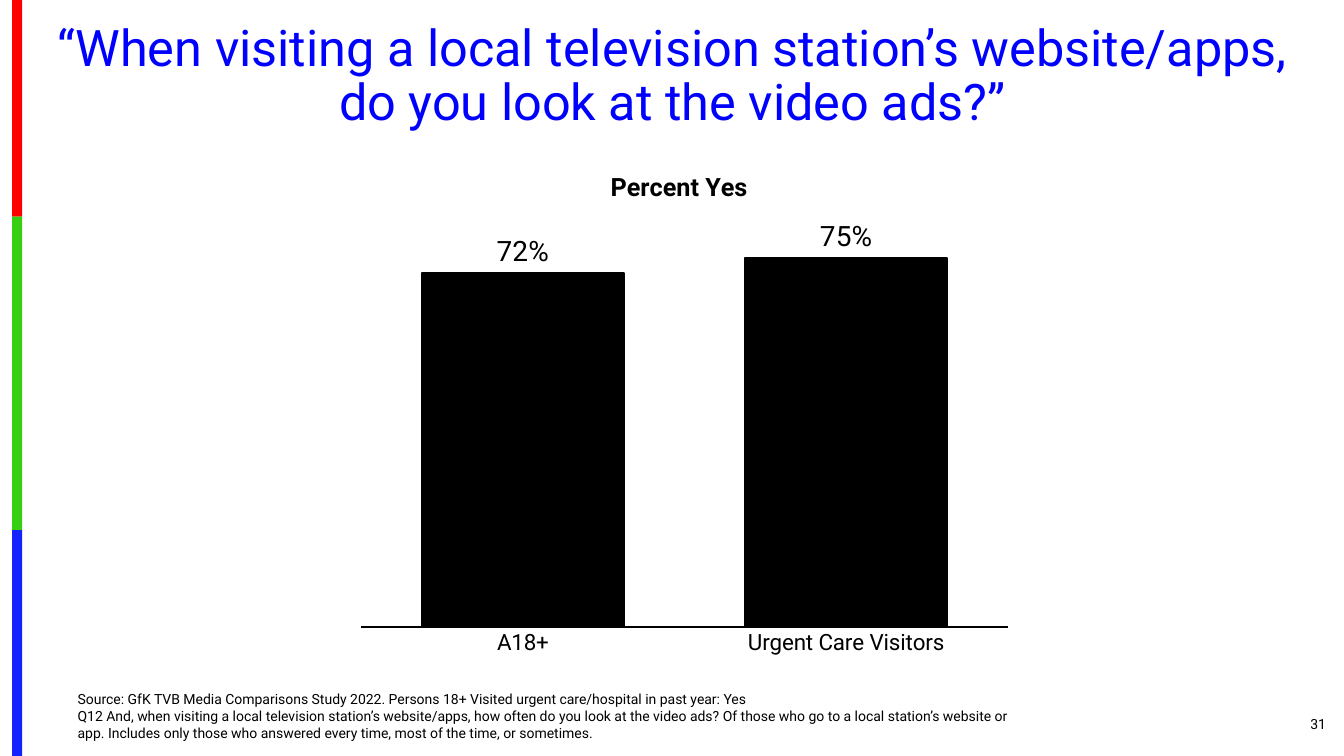
from dataclasses import dataclass
from lxml.etree import SubElement as Sub
from pptx import Presentation
from pptx.chart.data import CategoryChartData as Data
from pptx.dml.color import RGBColor as RGB
from pptx.enum.chart import XL_CHART_TYPE as Kind, XL_LABEL_POSITION as Spot
from pptx.enum.chart import XL_TICK_LABEL_POSITION as Tags, XL_TICK_MARK as Tick
from pptx.enum.shapes import MSO_SHAPE as Form
from pptx.enum.text import MSO_ANCHOR as Anchor, MSO_AUTO_SIZE as Fit, PP_ALIGN as Align
from pptx.oxml import parse_xml
from pptx.oxml.ns import nsdecls, qn
from pptx.util import Inches, Pt


@dataclass(frozen=True)
class Theme:
    font: str = "Roboto"
    ink: str = "000000"
    head: str = "0000FF"
    red: str = "FE0000"
    green: str = "36CF12"
    blue: str = "1322FE"
    title: int = 36
    value: int = 20
    label: int = 18
    axis: int = 16
    note: int = 10


@dataclass(frozen=True)
class Box:
    x: float
    y: float
    w: float
    h: float

    def lengths(self):
        return [Inches(n) for n in (self.x, self.y, self.w, self.h)]


THEME = Theme()


def style(font, size, color=THEME.ink, bold=False):
    font.name = THEME.font
    font.size = Pt(size)
    font.bold = bold
    font.color.rgb = RGB.from_string(color)


def move(shape, box):
    shape.left, shape.top, shape.width, shape.height = box.lengths()


def add_stripes(slide, box):
    bands = ((THEME.red, 2.15), (THEME.green, 3.11), (THEME.blue, 2.24))
    top = box.y
    for color, tall in bands:
        band = Box(box.x, top, box.w, tall)
        stripe = slide.shapes.add_shape(Form.RECTANGLE, *band.lengths())
        stripe.shadow.inherit = False
        stripe.fill.solid()
        stripe.fill.fore_color.rgb = RGB.from_string(color)
        stripe.line.fill.background()
        top += tall


def add_title(slide, box):
    title = slide.shapes.title
    move(title, box)
    frame = title.text_frame
    frame.text = ("“When visiting a local television station’s website/apps, "
                  "do you look at the video ads?”")
    frame.auto_size = Fit.NONE
    line = frame.paragraphs[0]
    line.alignment = Align.CENTER
    line.line_spacing = 0.9
    style(line.runs[0].font, THEME.title, THEME.head)


def add_source(slide, box):
    body = slide.placeholders[1]
    move(body, box)
    frame = body.text_frame
    frame.text = (
        "Source: GfK TVB Media Comparisons Study 2022. "
        "Persons 18+ Visited urgent care/hospital in past year: Yes\v"
        "Q12 And, when visiting a local television station’s website/apps, "
        "how often do you look at the video ads? Of those who go to a local "
        "station’s website or app. Includes only those who answered every time, "
        "most of the time, or sometimes.")
    frame.auto_size = Fit.NONE
    frame.vertical_anchor = Anchor.BOTTOM
    line = frame.paragraphs[0]
    props = line._p.get_or_add_pPr()
    props.set("marL", "0")
    props.set("indent", "0")
    Sub(props, qn("a:buNone"))
    line.space_before = Pt(0)
    for run in line.runs:
        style(run.font, THEME.note)


def add_number(slide, box):
    frame = slide.shapes.add_textbox(*box.lengths()).text_frame
    frame.text = "31"
    frame.word_wrap = True
    frame.vertical_anchor = Anchor.MIDDLE
    line = frame.paragraphs[0]
    line.alignment = Align.RIGHT
    style(line.runs[0].font, THEME.note)


def set_layout(parent, index, **parts):
    for old in parent.findall(qn("c:layout")):
        parent.remove(old)
    rows = "".join(f'<c:{name} val="{val}"/>' for name, val in parts.items())
    parent.insert(index, parse_xml(
        f'<c:layout {nsdecls("c")}><c:manualLayout>{rows}'
        '</c:manualLayout></c:layout>'))


def set_line(line):
    line.color.rgb = RGB.from_string(THEME.ink)
    line.width = Pt(1.5)


def add_chart(slide, box):
    data = Data(number_format="0%")
    data.categories = ["A18+", "Urgent Care Visitors"]
    data.add_series("Series 1", (0.72, 0.75))
    chart = slide.shapes.add_chart(
        Kind.COLUMN_CLUSTERED, *box.lengths(), data).chart
    style(chart.font, THEME.note)
    chart.has_legend = False

    chart.has_title = True
    title = chart.chart_title
    title.text_frame.text = "Percent Yes"
    style(title.text_frame.paragraphs[0].runs[0].font, THEME.label, bold=True)
    set_layout(title._element, 1, xMode="edge", yMode="edge", x=0.39, y=0.05)
    set_layout(chart._chartSpace.chart.plotArea, 0, layoutTarget="inner",
               xMode="edge", yMode="edge", x=0.047, y=0.167, w=0.906, h=0.681)

    scale = chart.value_axis
    scale.minimum_scale, scale.maximum_scale = 0, 0.8
    scale.has_major_gridlines = False
    scale.tick_label_position = Tags.NONE
    scale.visible = False

    names = chart.category_axis
    names.major_tick_mark = names.minor_tick_mark = Tick.NONE
    style(names.tick_labels.font, THEME.axis)
    set_line(names.format.line)

    plot = chart.plots[0]
    plot.gap_width = 60
    plot.vary_by_categories = False
    bars = plot.series[0]
    bars.format.fill.solid()
    bars.format.fill.fore_color.rgb = RGB.from_string(THEME.ink)
    set_line(bars.format.line)
    labels = bars.data_labels
    labels.show_value = True
    labels.number_format = "0%"
    labels.number_format_is_linked = False
    labels.position = Spot.OUTSIDE_END
    style(labels.font, THEME.value)


def main():
    deck = Presentation()
    deck.slide_width, deck.slide_height = Inches(13.33), Inches(7.5)
    slide = deck.slides.add_slide(deck.slide_layouts[1])
    add_stripes(slide, Box(0.12, 0, 0.1, 7.5))
    add_title(slide, Box(0.46, 0.17, 12.42, 1.19))
    add_number(slide, Box(12.17, 6.98, 1.08, 0.4))
    add_source(slide, Box(0.67, 6.79, 9.42, 0.61))
    add_chart(slide, Box(3.25, 1.36, 7.08, 5.73))
    deck.save("out.pptx")


if __name__ == "__main__":
    main()
